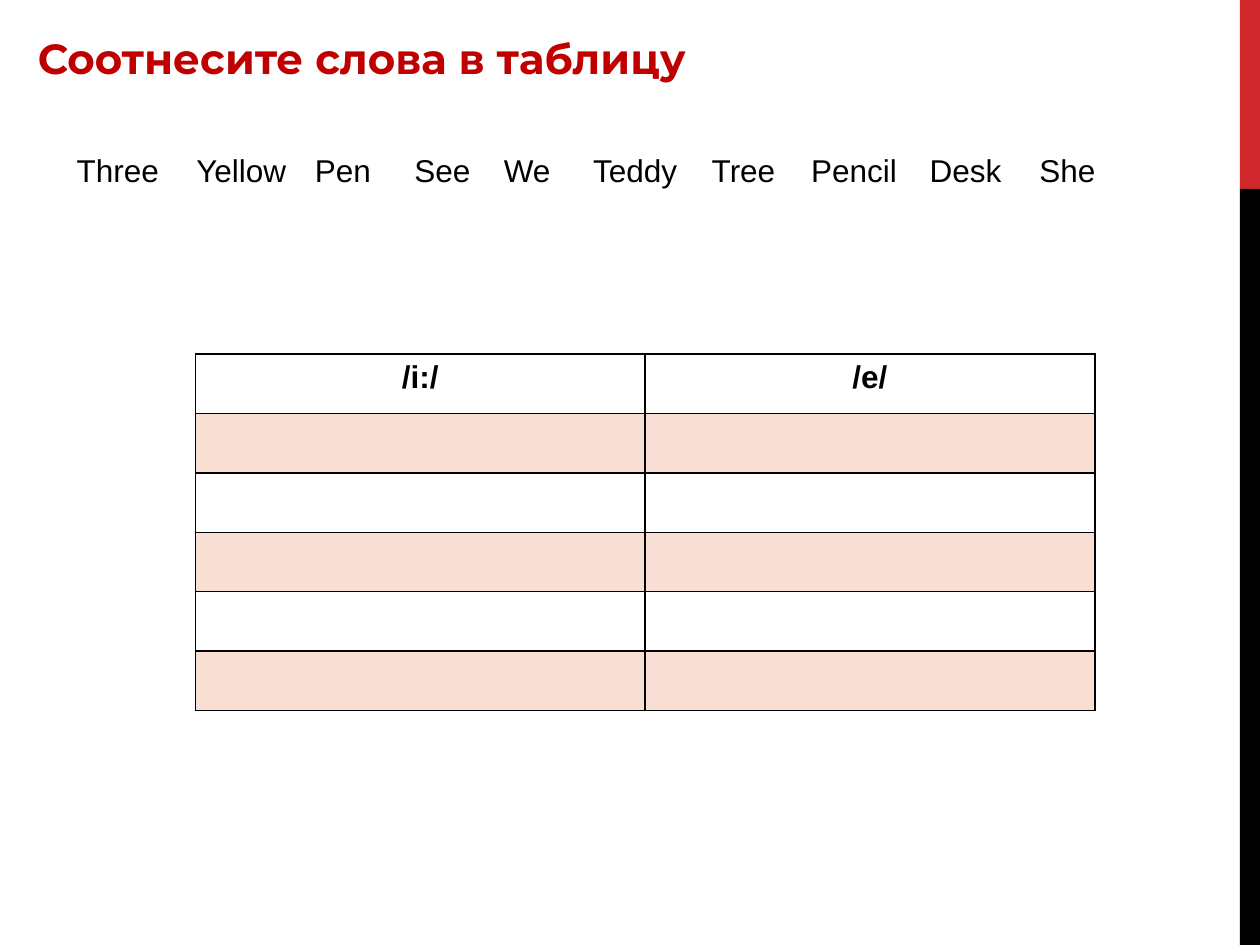
import dataclasses

import lxml.etree
import pptx
import pptx.dml.color
import pptx.enum.shapes
import pptx.enum.text
import pptx.oxml.ns
import pptx.util
from pptx.util import Inches


@dataclasses.dataclass(frozen=True)
class Theme:
    title_font: str = "Montserrat"
    body_font: str = "Arial"
    title_size: int = 24
    body_size: int = 18
    border_width: int = 1
    title: str = "C00000"
    text: str = "000000"
    accent: str = "D1282E"
    dark: str = "000000"
    plain_row: str = "FFFFFF"
    tinted_row: str = "F8DED3"


THEME = Theme()
WORDS = [
    ("Three", 0.95), ("Yellow", 0.94), ("Pen", 0.79), ("See", 0.71), ("We", 0.71),
    ("Teddy", 0.94), ("Tree", 0.79), ("Pencil", 0.94), ("Desk", 0.87), ("She", 0.71),
]
SOUNDS = ["/i:/", "/e/"]
ANSWER_ROWS = 5


def rgb(color):
    return pptx.dml.color.RGBColor.from_string(color)


def write_text(frame, text, font=THEME.body_font, size=THEME.body_size, color=THEME.text,
               bold=False, align=pptx.enum.text.PP_ALIGN.LEFT):
    paragraph = frame.paragraphs[0]
    paragraph.alignment = align
    run = paragraph.add_run()
    run.text = text
    run.font.name = font
    run.font.size = pptx.util.Pt(size)
    run.font.bold = bold
    run.font.color.rgb = rgb(color)


def place_title(slide, left, top, width, height):
    title = slide.shapes.title
    title.left, title.top, title.width, title.height = left, top, width, height
    frame = title.text_frame
    frame.word_wrap = False
    frame.auto_size = pptx.enum.text.MSO_AUTO_SIZE.SHAPE_TO_FIT_TEXT
    frame.vertical_anchor = pptx.enum.text.MSO_ANCHOR.TOP
    write_text(frame, "Соотнесите слова в таблицу", font=THEME.title_font,
               size=THEME.title_size, color=THEME.title, bold=True)


def add_side_bar(slide, left, top, width, height):
    accent_height = int(height * 0.2)
    parts = [
        (top, accent_height, THEME.accent),
        (top + accent_height, height - accent_height, THEME.dark),
    ]
    for part_top, part_height, color in parts:
        shape = slide.shapes.add_shape(pptx.enum.shapes.MSO_SHAPE.RECTANGLE,
                                       left, part_top, width, part_height)
        shape.shadow.inherit = False
        shape.fill.solid()
        shape.fill.fore_color.rgb = rgb(color)
        shape.line.fill.background()


def add_word_row(slide, left, top, height):
    for word, word_width in WORDS:
        box = slide.shapes.add_textbox(left, top, Inches(word_width), height)
        box.text_frame.word_wrap = True
        box.text_frame.auto_size = pptx.enum.text.MSO_AUTO_SIZE.SHAPE_TO_FIT_TEXT
        write_text(box.text_frame, word)
        left += Inches(word_width)


def set_borders(cell):
    properties = cell._tc.get_or_add_tcPr()
    qn = pptx.oxml.ns.qn
    for index, side in enumerate(("lnL", "lnR", "lnT", "lnB")):
        line = lxml.etree.Element(qn(f"a:{side}"), w=str(pptx.util.Pt(THEME.border_width)))
        fill = lxml.etree.SubElement(line, qn("a:solidFill"))
        lxml.etree.SubElement(fill, qn("a:srgbClr"), val=THEME.text)
        properties.insert(index, line)


def add_sound_table(slide, left, top, width, height):
    row_count = ANSWER_ROWS + 1
    table = slide.shapes.add_table(row_count, len(SOUNDS), left, top, width, height).table
    table.first_row = False
    table.horz_banding = False
    for row_index, row in enumerate(table.rows):
        row.height = height // row_count
        for cell in row.cells:
            cell.fill.solid()
            cell.fill.fore_color.rgb = rgb(THEME.tinted_row if row_index % 2 else THEME.plain_row)
            set_borders(cell)
    for column, sound in enumerate(SOUNDS):
        write_text(table.cell(0, column).text_frame, sound, bold=True,
                   align=pptx.enum.text.PP_ALIGN.CENTER)


def main():
    presentation = pptx.Presentation()
    presentation.slide_width = Inches(10)
    presentation.slide_height = Inches(7.5)
    slide = presentation.slides.add_slide(presentation.slide_layouts.get_by_name("Title Only"))
    add_side_bar(slide, Inches(9.84), Inches(0), Inches(0.16), Inches(7.5))
    place_title(slide, Inches(0.2), Inches(0.21), Inches(5.61), Inches(0.5))
    add_word_row(slide, Inches(0.51), Inches(1.15), Inches(0.4))
    add_sound_table(slide, Inches(1.55), Inches(2.81), Inches(7.14), Inches(2.83))
    presentation.save("out.pptx")


if __name__ == "__main__":
    main()
